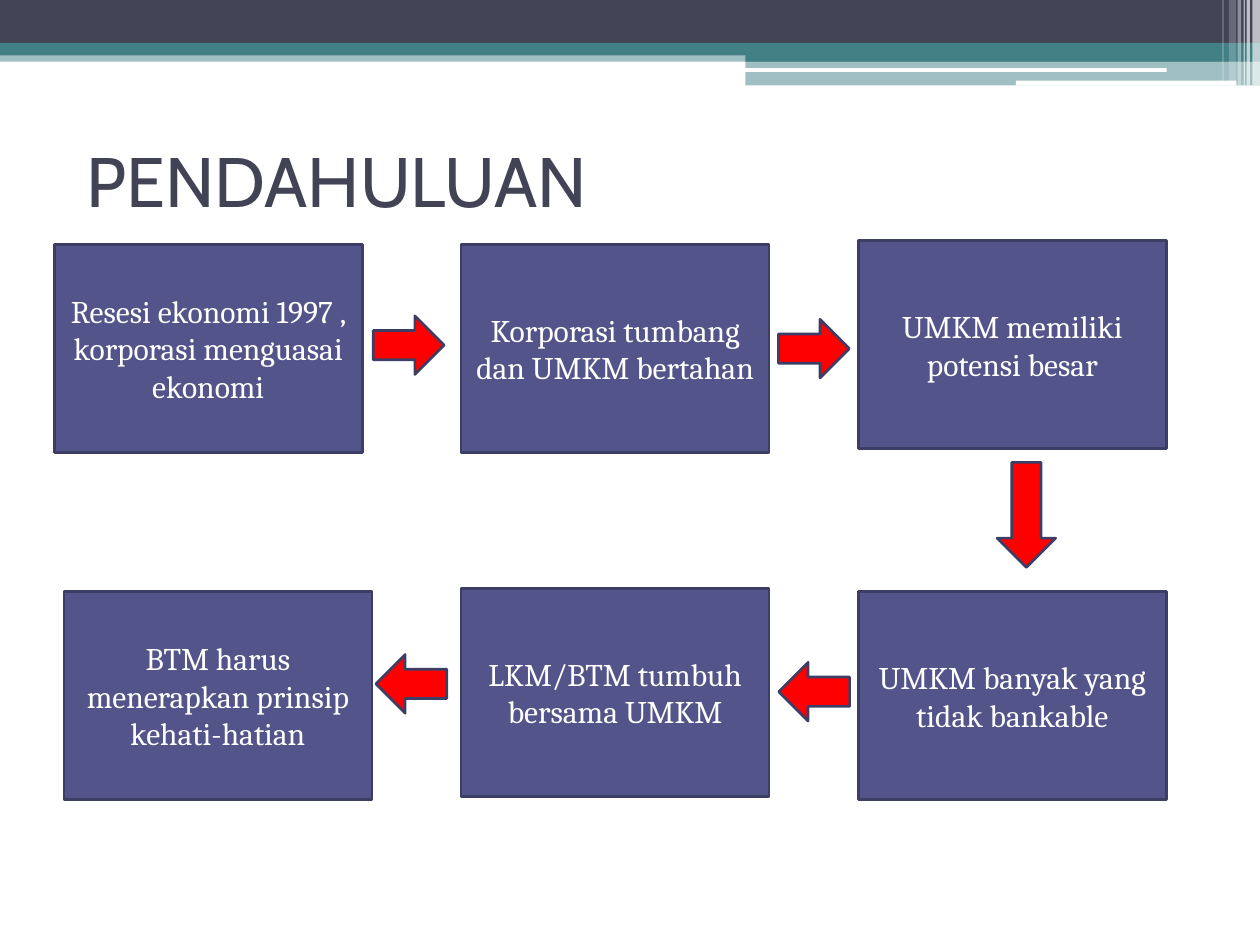
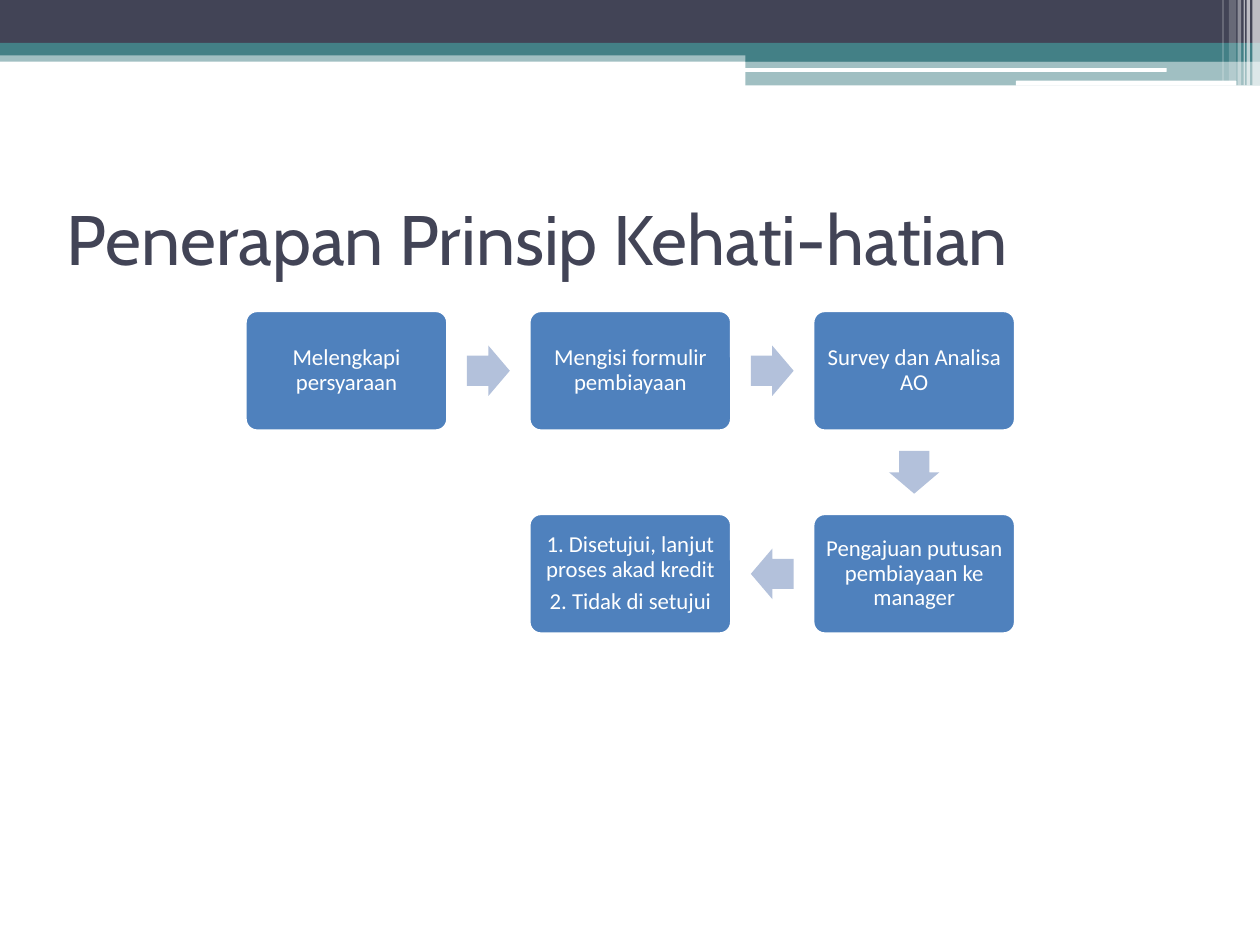
from pptx import Presentation
from pptx.dml.color import RGBColor
from pptx.enum.shapes import MSO_SHAPE as Preset
from pptx.enum.text import MSO_ANCHOR as Anchor, MSO_AUTO_SIZE as AutoSize, PP_ALIGN as Align
from pptx.oxml.ns import qn
from pptx.util import Pt
from lxml.etree import SubElement

INK = "424456"
TEAL = "438086"
WHITE = "FFFFFF"
BOX_FILL = "53548A"
BOX_LINE = "3D3E66"
RED = "FF0000"
CARD_BLUE = "4F81BD"
PALE_BLUE = "B3C1DB"

BANDS = [
    (0, 28.8, 720, 6.5, TEAL, 50),
    (0, 0, 720, 24.5, INK, 100),
    (0, 24.5, 720, 7.2, TEAL, 100),
    (426, 28.1, 294, 7.2, TEAL, 100),
    (426, 34.6, 294, 14.2, TEAL, 50),
]
PILLS = [(425.5, 38.9, 241.2, 2.2), (580.5, 46.1, 126, 2.9)]
STRIPES = [
    (715.7, 4.3, 48.8, 65),
    (712.3, 2, 48.8, 65),
    (710.7, 0.7, 48.8, 60),
    (707.2, 2, 48.8, 40),
    (702.2, 4.2, 46.2, 20),
    (698.5, 0.7, 46.2, 30),
]

BOX_WIDTH, BOX_HEIGHT = 176, 119
BOXES = [
    (31, 139.6, "Resesi ekonomi 1997 , korporasi menguasai ekonomi"),
    (263.5, 139.6, "Korporasi tumbang dan UMKM bertahan"),
    (490.5, 137.4, "UMKM memiliki potensi besar"),
    (490.5, 338, "UMKM banyak yang tidak bankable"),
    (263.5, 336.2, "LKM/BTM tumbuh bersama UMKM"),
    (36.5, 338, "BTM harus menerapkan prinsip kehati-hatian"),
]
BOX_ARROWS = [
    (213.3, 180.5, 40.5, 0),
    (444.8, 182.5, 40.5, 0),
    (556.5, 277.5, 60, 90),
    (445, 378.5, 40.5, 180),
    (214.8, 374, 40.5, 180),
]

CARD_LEFT, CARD_TOP = 140, 177.4
CARD_WIDTH, CARD_HEIGHT = 116, 69
COLUMN_STEP, ROW_STEP = 162.2, 116
CARDS = [
    (0, 0, ["Melengkapi persyaraan"]),
    (1, 0, ["Mengisi formulir pembiayaan"]),
    (2, 0, ["Survey dan Analisa AO"]),
    (2, 1, ["Pengajuan putusan pembiayaan ke manager"]),
    (1, 1, ["1. Disetujui, lanjut proses akad kredit", "2. Tidak di setujui"]),
]
CARD_ARROW_WIDTH, CARD_ARROW_HEIGHT = 24.5, 28.8
CARD_ARROWS = [(0.5, 0, 0), (1.5, 0, 0), (2, 0.5, 90), (1.5, 1, 180)]


def color(hex_value):
    return RGBColor.from_string(hex_value)


def write_text(shape, lines, font, size, hex_value=WHITE, align=Align.CENTER,
               inset=None, line_spacing=None, space_after=None):
    frame = shape.text_frame
    frame.word_wrap = True
    frame.auto_size = AutoSize.NONE
    frame.vertical_anchor = Anchor.MIDDLE
    if inset is not None:
        frame.margin_left = frame.margin_right = Pt(inset)
        frame.margin_top = frame.margin_bottom = Pt(inset)
    frame.text = "\n".join(lines)
    for paragraph in frame.paragraphs:
        paragraph.alignment = align
        paragraph.line_spacing = line_spacing
        if space_after is not None:
            paragraph.space_after = Pt(space_after)
        for run in paragraph.runs:
            run.font.name = font
            run.font.size = Pt(size)
            run.font.color.rgb = color(hex_value)


def add_block(slide, preset, left, top, width, height, fill, line=None,
              line_width=1.5, opacity=100, rotation=0, adjustments=()):
    shape = slide.shapes.add_shape(preset, Pt(left), Pt(top), Pt(width), Pt(height))
    shape.shadow.inherit = False
    shape.rotation = rotation
    for index, value in enumerate(adjustments):
        shape.adjustments[index] = value
    shape.fill.solid()
    shape.fill.fore_color.rgb = color(fill)
    if opacity < 100:
        fill_element = shape.fill._xPr.find(qn("a:solidFill"))
        SubElement(fill_element[0], qn("a:alpha"), val=str(opacity * 1000))
    if line:
        shape.line.color.rgb = color(line)
        shape.line.width = Pt(line_width)
    else:
        shape.line.fill.background()
    return shape


def add_header(slide):
    for left, top, width, height, fill, opacity in BANDS:
        add_block(slide, Preset.RECTANGLE, left, top, width, height, fill, opacity=opacity)
    for left, top, width, height in PILLS:
        add_block(slide, Preset.ROUNDED_RECTANGLE, left, top, width, height, WHITE)
    for left, width, height, opacity in STRIPES:
        add_block(slide, Preset.RECTANGLE, left, 0, width, height, WHITE, opacity=opacity)


def add_titled_slide(presentation, title_text, left, top):
    slide = presentation.slides.add_slide(presentation.slide_layouts[5])
    add_header(slide)
    title = slide.shapes.title
    title.left, title.top, title.width, title.height = Pt(left), Pt(top), Pt(648), Pt(84)
    write_text(title, [title_text], "Cabin", 40, INK, Align.LEFT)
    return slide


def add_box(slide, left, top, text):
    box = add_block(slide, Preset.RECTANGLE, left, top, BOX_WIDTH, BOX_HEIGHT,
                    BOX_FILL, BOX_LINE)
    write_text(box, [text], "Cambria", 18)


def add_card(slide, column, row, lines):
    card = add_block(slide, Preset.ROUNDED_RECTANGLE,
                     CARD_LEFT + column * COLUMN_STEP, CARD_TOP + row * ROW_STEP,
                     CARD_WIDTH, CARD_HEIGHT, CARD_BLUE, WHITE, 2, adjustments=[0.1])
    write_text(card, lines, "Calibri", 13, inset=3.6, line_spacing=0.9, space_after=4.55)


def add_card_arrow(slide, column, row, rotation):
    center_x = CARD_LEFT + CARD_WIDTH / 2 + column * COLUMN_STEP
    center_y = CARD_TOP + CARD_HEIGHT / 2 + row * ROW_STEP
    add_block(slide, Preset.RIGHT_ARROW, center_x - CARD_ARROW_WIDTH / 2,
              center_y - CARD_ARROW_HEIGHT / 2, CARD_ARROW_WIDTH, CARD_ARROW_HEIGHT,
              PALE_BLUE, rotation=rotation, adjustments=[0.6, 0.5])


def build_introduction(presentation):
    slide = add_titled_slide(presentation, "PENDAHULUAN", 42.5, 60.5)
    for left, top, text in BOXES:
        add_box(slide, left, top, text)
    for left, top, width, rotation in BOX_ARROWS:
        add_block(slide, Preset.RIGHT_ARROW, left, top, width, 33.5, RED, BOX_LINE,
                  rotation=rotation)


def build_prudence_steps(presentation):
    slide = add_titled_slide(presentation, "Penerapan Prinsip Kehati-hatian", 31, 93.6)
    for column, row, lines in CARDS:
        add_card(slide, column, row, lines)
    for column, row, rotation in CARD_ARROWS:
        add_card_arrow(slide, column, row, rotation)


def main():
    presentation = Presentation()
    presentation.slide_width, presentation.slide_height = Pt(720), Pt(540)
    build_introduction(presentation)
    build_prudence_steps(presentation)
    presentation.save("out.pptx")


if __name__ == "__main__":
    main()
